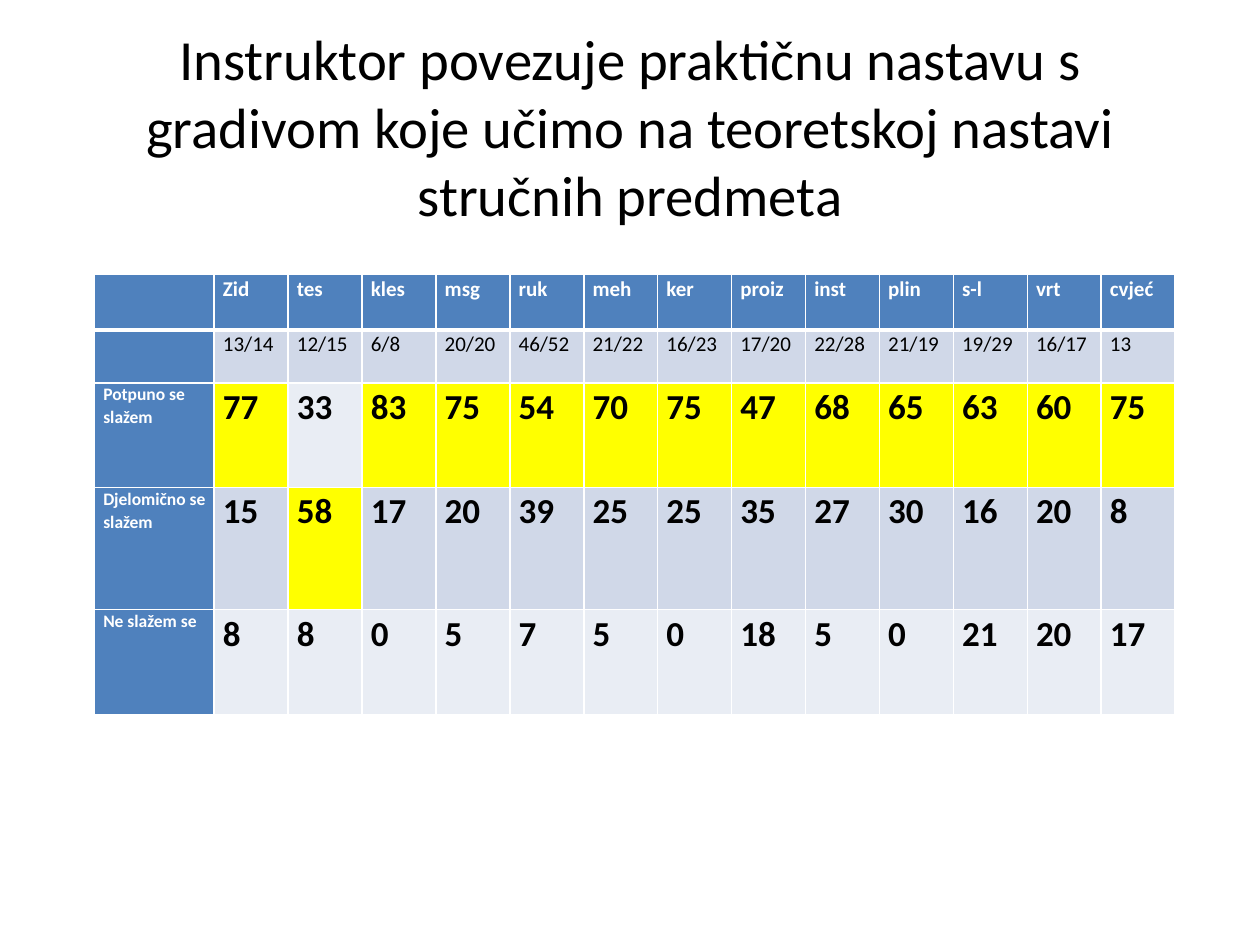
from dataclasses import dataclass

from pptx import Presentation
from pptx.dml.color import RGBColor
from pptx.enum.text import MSO_ANCHOR, PP_ALIGN
from pptx.oxml.ns import qn
from pptx.util import Inches, Pt
from lxml.etree import SubElement


@dataclass(frozen=True)
class Theme:
    font: str = "Calibri"
    black: str = "000000"
    white: str = "FFFFFF"
    header: str = "4F81BD"
    band_dark: str = "D0D8E8"
    band_light: str = "E9EDF4"
    highlight: str = "FFFF00"
    title_size: float = 32.4
    header_size: float = 12
    label_size: float = 10
    value_size: float = 20
    thin_border: float = 1
    thick_border: float = 3


TITLE = ("Instruktor povezuje praktičnu nastavu s gradivom koje učimo "
         "na teoretskoj nastavi stručnih predmeta")

# Survey results: one column per trade, answers in percent
TRADES = ["Zid", "tes", "kles", "msg", "ruk", "meh", "ker", "proiz",
          "inst", "plin", "s-l", "vrt", "cvjeć"]
RESPONSES = ["13/14", "12/15", "6/8", "20/20", "46/52", "21/22", "16/23",
             "17/20", "22/28", "21/19", "19/29", "16/17", "13"]
ANSWERS = {
    "Potpuno se slažem": [77, 33, 83, 75, 54, 70, 75, 47, 68, 65, 63, 60, 75],
    "Djelomično se slažem": [15, 58, 17, 20, 39, 25, 25, 35, 27, 30, 16, 20, 8],
    "Ne slažem se": [8, 8, 0, 5, 7, 5, 0, 18, 5, 0, 21, 20, 17],
}
ROW_HEIGHTS = [0.44, 0.42, 0.83, 0.97, 0.83]
TABLE_WIDTH = 8.58
LABEL_WIDTH = 0.95


class SlideBuilder:
    def __init__(self, presentation, theme):
        self.theme = theme
        self.slide = presentation.slides.add_slide(presentation.slide_layouts[5])

    def format_runs(self, paragraph, size, color, bold=False):
        for run in paragraph.runs:
            run.font.name = self.theme.font
            run.font.size = Pt(size)
            run.font.bold = bold
            run.font.color.rgb = RGBColor.from_string(color)

    def add_title(self, text, left, top, width, height):
        title = self.slide.shapes.title
        title.left, title.top = Inches(left), Inches(top)
        title.width, title.height = Inches(width), Inches(height)
        text_frame = title.text_frame
        text_frame.text = text
        text_frame.word_wrap = True
        text_frame.vertical_anchor = MSO_ANCHOR.MIDDLE
        paragraph = text_frame.paragraphs[0]
        paragraph.alignment = PP_ALIGN.CENTER
        self.format_runs(paragraph, self.theme.title_size, self.theme.black)

    def add_table(self, left, top, row_heights, column_widths):
        frame = self.slide.shapes.add_table(
            len(row_heights), len(column_widths), Inches(left), Inches(top),
            Inches(sum(column_widths)), Inches(sum(row_heights)))
        table = frame.table
        for row, height in zip(table.rows, row_heights):
            row.height = Inches(height)
        for column, width in zip(table.columns, column_widths):
            column.width = Inches(width)
        return table

    def set_borders(self, cell, top, bottom):
        thin = self.theme.thin_border
        properties = cell._tc.get_or_add_tcPr()
        for side, width in (("L", thin), ("R", thin), ("T", top), ("B", bottom)):
            line = SubElement(properties, qn(f"a:ln{side}"), w=str(Pt(width)))
            fill = SubElement(line, qn("a:solidFill"))
            SubElement(fill, qn("a:srgbClr"), val=self.theme.white)

    def fill_cell(self, cell, text, fill, size, color, bold, top, bottom):
        self.set_borders(cell, top, bottom)
        cell.fill.solid()
        cell.fill.fore_color.rgb = RGBColor.from_string(fill)
        cell.margin_left = cell.margin_right = Inches(0.07)
        cell.margin_top = cell.margin_bottom = 0
        if text:
            cell.text_frame.text = text
            paragraph = cell.text_frame.paragraphs[0]
            paragraph.line_spacing = 1.07
            self.format_runs(paragraph, size, color, bold)

    def add_survey_table(self, left, top):
        theme = self.theme
        trade_width = (TABLE_WIDTH - LABEL_WIDTH) / len(TRADES)
        table = self.add_table(left, top, ROW_HEIGHTS,
                               [LABEL_WIDTH] + [trade_width] * len(TRADES))
        rows = [["", *TRADES], ["", *RESPONSES]]
        rows += [[label, *map(str, values)] for label, values in ANSWERS.items()]
        # The most frequent answer of each trade is highlighted
        highest = [max(column) for column in zip(*ANSWERS.values())]

        for row_index, row in enumerate(rows):
            band = theme.band_dark if row_index % 2 else theme.band_light
            is_answer = row_index >= 2
            # A thick line separates the header from the body
            top_border = theme.thick_border if row_index == 1 else theme.thin_border
            bottom_border = theme.thick_border if row_index == 0 else theme.thin_border
            for column_index, text in enumerate(row):
                is_header = row_index == 0 or column_index == 0
                if is_header:
                    fill, color = theme.header, theme.white
                    size = theme.label_size if is_answer else theme.header_size
                else:
                    is_highest = is_answer and int(text) == highest[column_index - 1]
                    fill = theme.highlight if is_highest else band
                    color = theme.black
                    size = theme.value_size if is_answer else theme.header_size
                self.fill_cell(table.cell(row_index, column_index), text, fill, size,
                               color, is_header or is_answer, top_border, bottom_border)


def main():
    presentation = Presentation()
    presentation.slide_width = Inches(10)
    presentation.slide_height = Inches(7.5)
    builder = SlideBuilder(presentation, Theme())
    builder.add_title(TITLE, 0.5, 0.3, 9, 1.4)
    builder.add_survey_table(0.75, 2.18)
    presentation.save("out.pptx")


if __name__ == "__main__":
    main()
